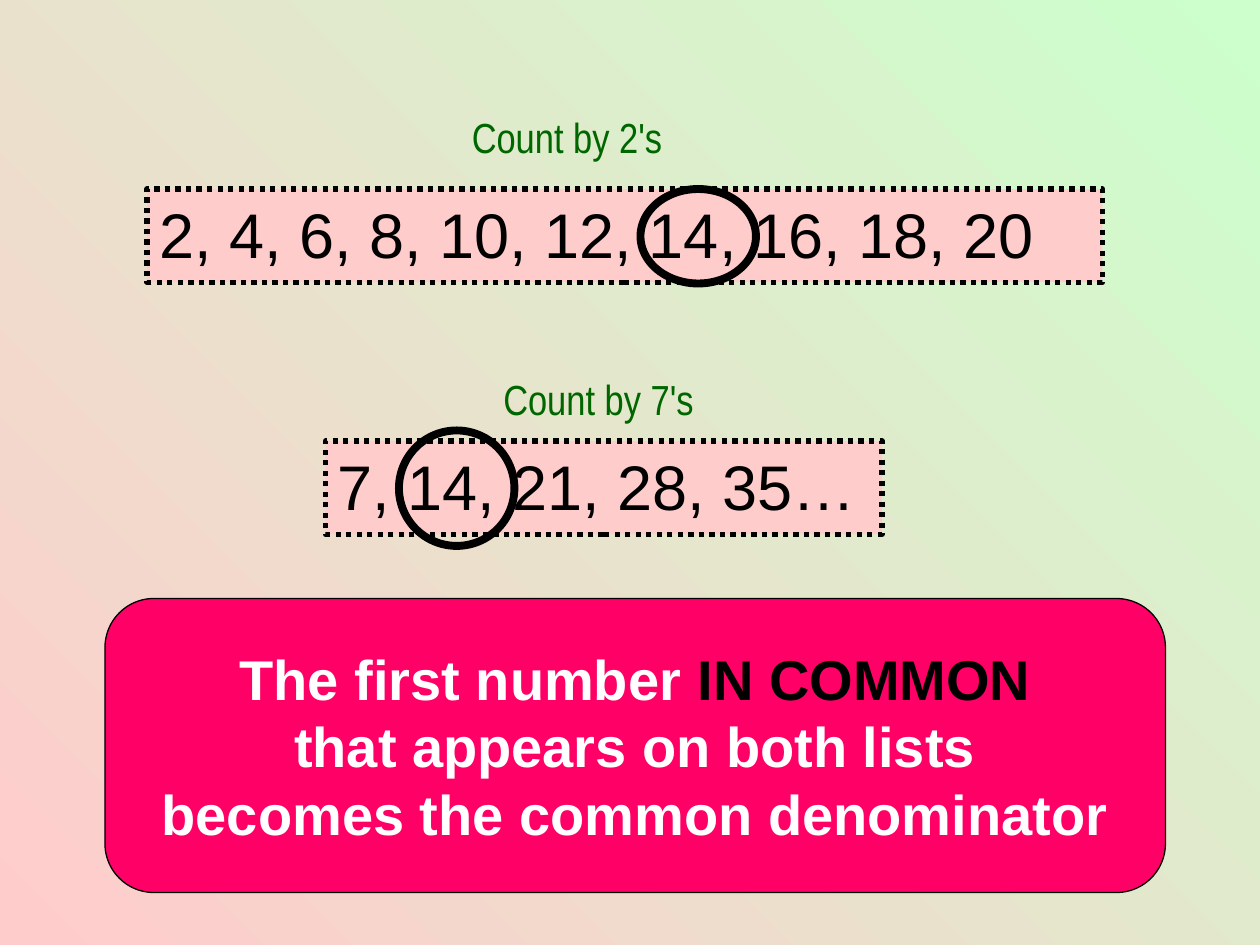
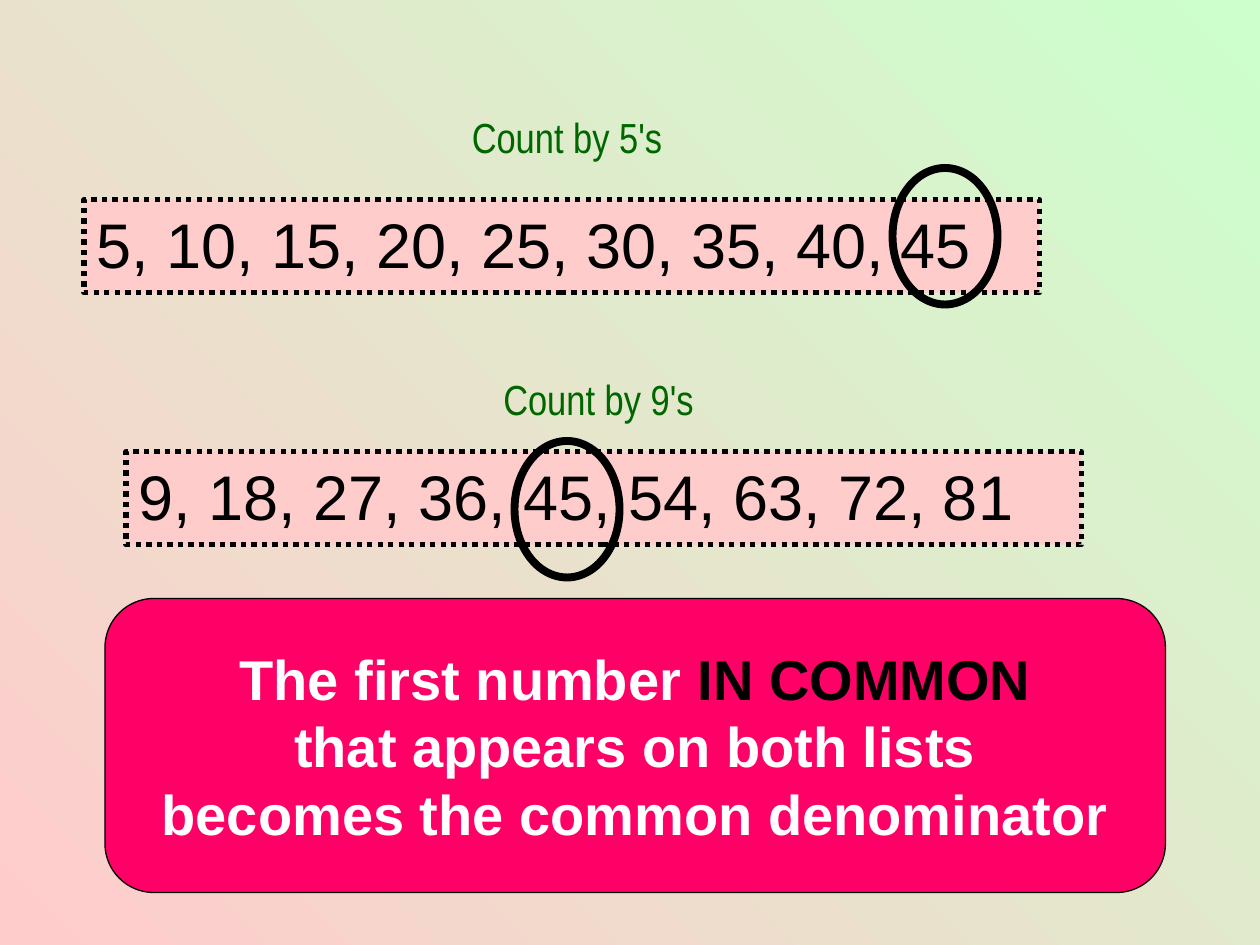
from pptx import Presentation
from pptx.dml.color import RGBColor as RGB
from pptx.enum.dml import MSO_LINE as DASH
from pptx.enum.shapes import MSO_SHAPE as KIND
from pptx.enum.text import MSO_ANCHOR as ANCHOR, MSO_AUTO_SIZE as FIT, PP_ALIGN as ALIGN
from pptx.oxml import parse_xml
from pptx.oxml.ns import nsdecls
from pptx.util import Pt

PX = 9525  # 96 px to the inch
PINK = RGB(0xFF, 0xCC, 0xCC)
MINT = RGB(0xCC, 0xFF, 0xCC)
GREEN = RGB(0x00, 0x66, 0x00)
ROSE = RGB(0xFF, 0x00, 0x66)
BLACK = RGB(0x00, 0x00, 0x00)
WHITE = RGB(0xFF, 0xFF, 0xFF)

# Text edge and space before, which need XML
EDGE = (f'<a:ln {nsdecls("a")} w="9525"><a:solidFill>'
        '<a:srgbClr val="000000"/></a:solidFill></a:ln>')
SPACE = f'<a:spcBef {nsdecls("a")}><a:spcPct val="50000"/></a:spcBef>'

# Each row: label, numbers, list box, ring
SLIDES = [
    [("Count by 2's", "2, 4, 6, 8, 10, 12, 14, 16, 18, 20",
      (112, 144, 728, 71), (488, 144, 88, 72)),
     ("Count by 7's", "7, 14, 21, 28, 35…",
      (248, 336, 424, 71), (304, 328, 88, 88))],
    [("Count by 5's", "5, 10, 15, 20, 25, 30, 35, 40, 45",
      (64, 152, 728, 71), (680, 128, 80, 104)),
     ("Count by 9's", "9, 18, 27, 36, 45, 54, 63, 72, 81",
      (96, 344, 728, 71), (392, 336, 80, 104))],
]
LABELS = [(280, 80, 304, 40), (304, 280, 304, 40)]
NOTE = [
    [("The first number ", WHITE), ("IN COMMON", BLACK)],
    [("that appears on both lists", WHITE)],
    [("becomes the common denominator", WHITE)],
]


def draw(kind, box, fill=None, width=0.75, dash=None):
    shape = slide.shapes.add_shape(kind, *(n * PX for n in box))
    shape.shadow.inherit = False
    if fill is None:
        shape.fill.background()
    else:
        shape.fill.solid()
        shape.fill.fore_color.rgb = fill
    shape.line.color.rgb = BLACK
    shape.line.width = Pt(width)
    if dash:
        shape.line.dash_style = dash
    return shape


def write(shape, lines, size, font="Arial", bold=False, align=ALIGN.CENTER,
          anchor=ANCHOR.TOP, wrap=False, edge=False, space=False):
    frame = shape.text_frame
    frame.word_wrap = wrap
    frame.vertical_anchor = anchor
    for i, line in enumerate(lines):
        para = frame.add_paragraph() if i else frame.paragraphs[0]
        para.alignment = align
        if space:
            para._p.get_or_add_pPr().append(parse_xml(SPACE))
        for text, color in line:
            run = para.add_run()
            run.text = text
            run.font.name = font
            run.font.size = Pt(size)
            run.font.bold = bold
            run.font.color.rgb = color
            if edge:
                run.font._element.insert(0, parse_xml(EDGE))


deck = Presentation()
deck.slide_width, deck.slide_height = 960 * PX, 720 * PX

for rows in SLIDES:
    slide = deck.slides.add_slide(deck.slide_layouts[6])

    # Background, pink at lower left to mint at upper right
    back = slide.background.fill
    back.gradient()
    back.gradient_angle = 45
    for stop, color in zip(back.gradient_stops, (PINK, MINT)):
        stop.color.rgb = color

    # Labelled lists, each with its shared number ringed
    for (label, nums, box, ring), spot in zip(rows, LABELS):
        strip = draw(KIND.RECTANGLE, box, PINK, 3, DASH.ROUND_DOT)
        write(strip, [[(nums, BLACK)]], 36, align=ALIGN.LEFT, wrap=True, space=True)
        strip.text_frame.auto_size = FIT.SHAPE_TO_FIT_TEXT
        head = slide.shapes.add_textbox(*(n * PX for n in spot))
        write(head, [[(label, GREEN)]], 24, font="Arial Narrow", edge=True)
        draw(KIND.OVAL, ring, width=4.5)

    # Rule at the foot
    note = draw(KIND.ROUNDED_RECTANGLE, (80, 456, 808, 224), ROSE)
    write(note, NOTE, 32, bold=True, anchor=ANCHOR.MIDDLE)

deck.save("out.pptx")
